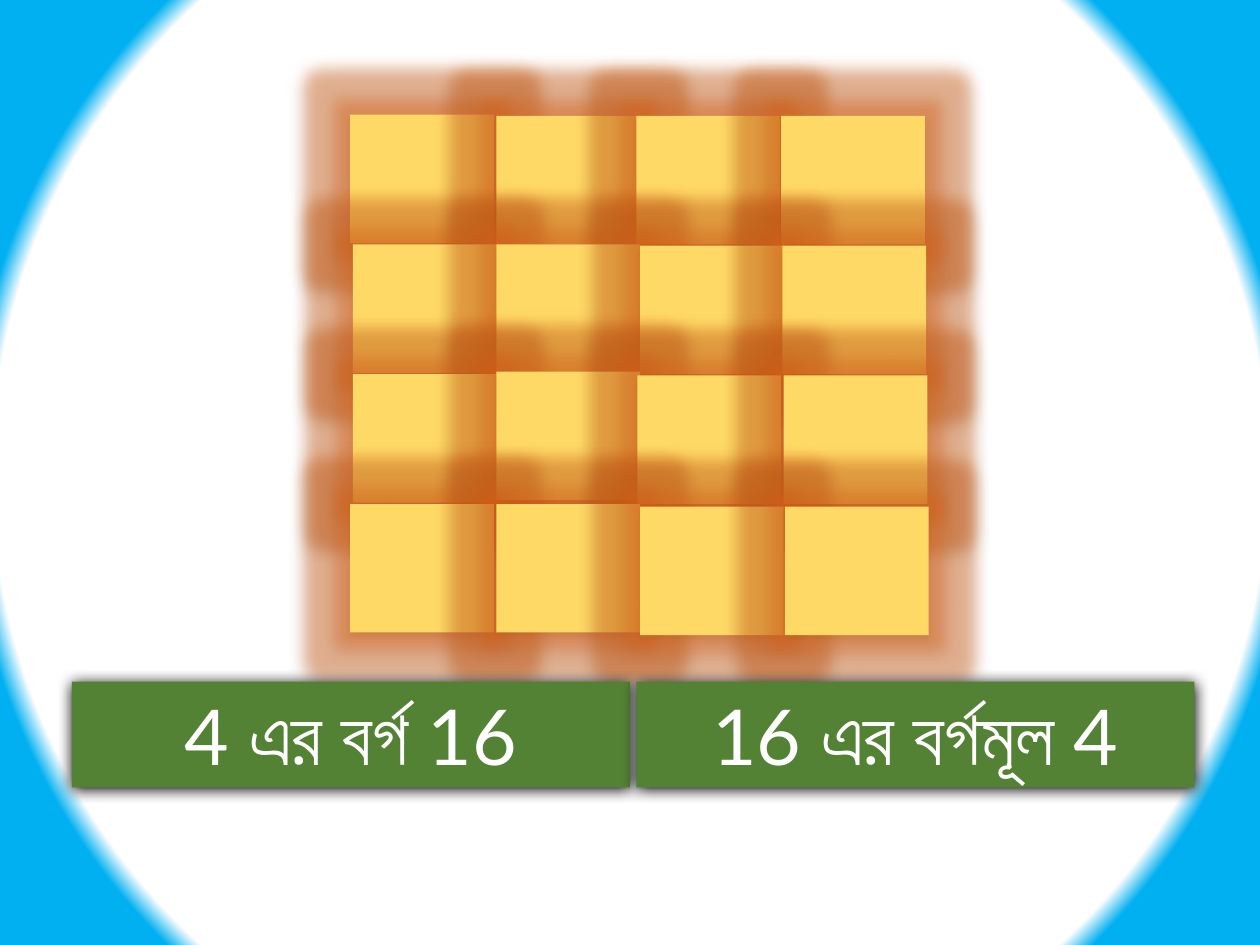
from pptx import Presentation
from pptx.dml.color import RGBColor
from pptx.enum.shapes import MSO_SHAPE as Shape
from pptx.enum.text import MSO_ANCHOR as Anchor, MSO_AUTO_SIZE as AutoSize, PP_ALIGN as Align
from pptx.oxml import parse_xml
from pptx.oxml.ns import nsdecls, qn
from pptx.util import Inches, Pt

WHITE = RGBColor(0xFF, 0xFF, 0xFF)
SKY = RGBColor(0x00, 0xB0, 0xF0)
YELLOW = RGBColor(0xFF, 0xD9, 0x66)
ORANGE = RGBColor(0xE2, 0x68, 0x1B)
GREEN = RGBColor(0x54, 0x82, 0x35)
BLACK = RGBColor(0x00, 0x00, 0x00)

TILE_SIZE = (1.14, 1.02)
# Left and top of each hand-placed tile, one line for each row of the square
TILE_ROWS = [
    [(2.78, 0.91), (3.94, 0.92), (5.05, 0.92), (6.2, 0.92)],
    [(2.8, 1.94), (3.94, 1.94), (5.08, 1.95), (6.21, 1.95)],
    [(2.8, 2.97), (3.94, 2.95), (5.06, 2.98), (6.22, 2.98)],
    [(2.78, 4), (3.94, 4), (5.08, 4.02), (6.23, 4.02)],
]
LABELS = [(0.57, "4 এর বর্গ 16"), (5.05, "16 এর বর্গমূল 4")]
LABEL_TOP = 5.41
LABEL_SIZE = (4.43, 0.84)
LABEL_FONT = {"name": "Lato", "size": Pt(44)}


def set_spotlight(page):
    """Fill the background with a white disc that turns sharply to blue."""
    page.background.fill.gradient()
    linear = page._element.find(".//" + qn("a:gradFill"))
    stops = "".join(
        f'<a:gs pos="{percent * 1000}"><a:srgbClr val="{color}"/></a:gs>'
        for percent, color in [(81, WHITE), (84, SKY)]
    )
    linear.getparent().replace(linear, parse_xml(
        f'<a:gradFill {nsdecls("a")} rotWithShape="1"><a:gsLst>{stops}</a:gsLst>'
        '<a:path path="circle">'
        '<a:fillToRect l="50000" t="50000" r="50000" b="50000"/>'
        '</a:path></a:gradFill>'
    ))


def glow_xml(color, radius, opacity):
    return (f'<a:glow rad="{Pt(radius)}"><a:srgbClr val="{color}">'
            f'<a:alpha val="{opacity * 1000}"/></a:srgbClr></a:glow>')


def shadow_xml(opacity, blur, distance):
    """Describe a black shadow that falls straight down."""
    return (f'<a:outerShdw blurRad="{Pt(blur)}" dist="{Pt(distance)}" '
            f'dir="5400000" algn="ctr" rotWithShape="0"><a:srgbClr val="{BLACK}">'
            f'<a:alpha val="{opacity * 1000}"/></a:srgbClr></a:outerShdw>')


def add_block(page, place, size, color, effects):
    block = page.shapes.add_shape(
        Shape.RECTANGLE, *(Inches(length) for length in (*place, *size)))
    block.fill.solid()
    block.fill.fore_color.rgb = color
    block.line.fill.background()
    block.shadow.inherit = False
    effect_list = block._element.spPr.find(qn("a:effectLst"))
    for effect in parse_xml(f'<a:effectLst {nsdecls("a")}>{effects}</a:effectLst>'):
        effect_list.append(effect)
    return block


def add_label(page, left, text):
    box = add_block(page, (left, LABEL_TOP), LABEL_SIZE, GREEN,
                    shadow_xml(100, 8.5, 1))
    frame = box.text_frame
    frame.word_wrap = True
    frame.auto_size = AutoSize.SHAPE_TO_FIT_TEXT
    frame.vertical_anchor = Anchor.MIDDLE
    para = frame.paragraphs[0]
    para.alignment = Align.CENTER
    span = para.add_run()
    span.text = text
    for name, value in LABEL_FONT.items():
        setattr(span.font, name, value)
    span.font.color.rgb = WHITE


def main():
    deck = Presentation()
    deck.slide_width, deck.slide_height = Inches(10), Inches(7.5)
    page = deck.slides.add_slide(deck.slide_layouts[6])
    set_spotlight(page)
    tile_effects = glow_xml(ORANGE, 18, 40) + shadow_xml(32, 3.5, 2.2)
    for row in TILE_ROWS:
        for place in row:
            add_block(page, place, TILE_SIZE, YELLOW, tile_effects)
    for left, text in LABELS:
        add_label(page, left, text)
    deck.save("out.pptx")


if __name__ == "__main__":
    main()
